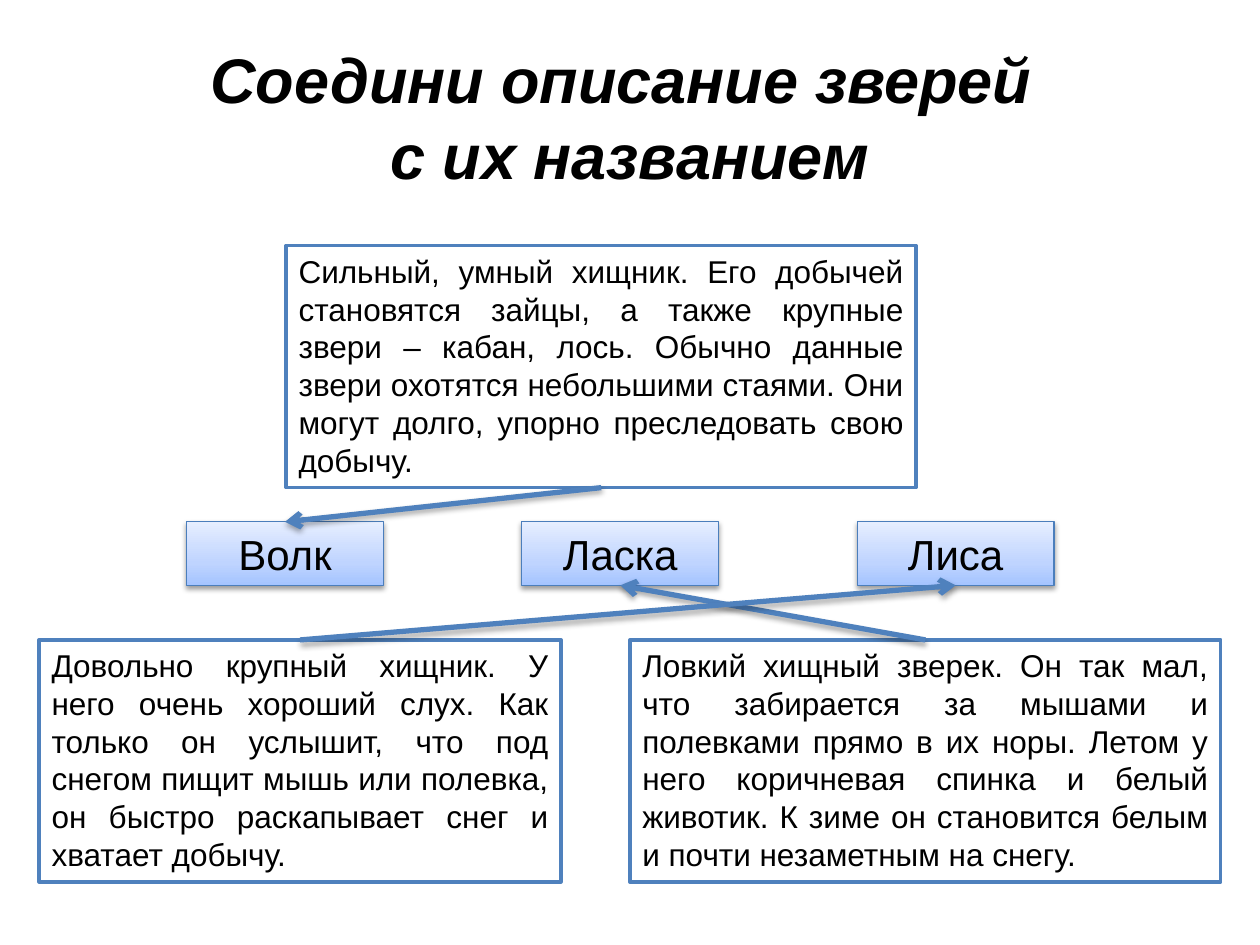
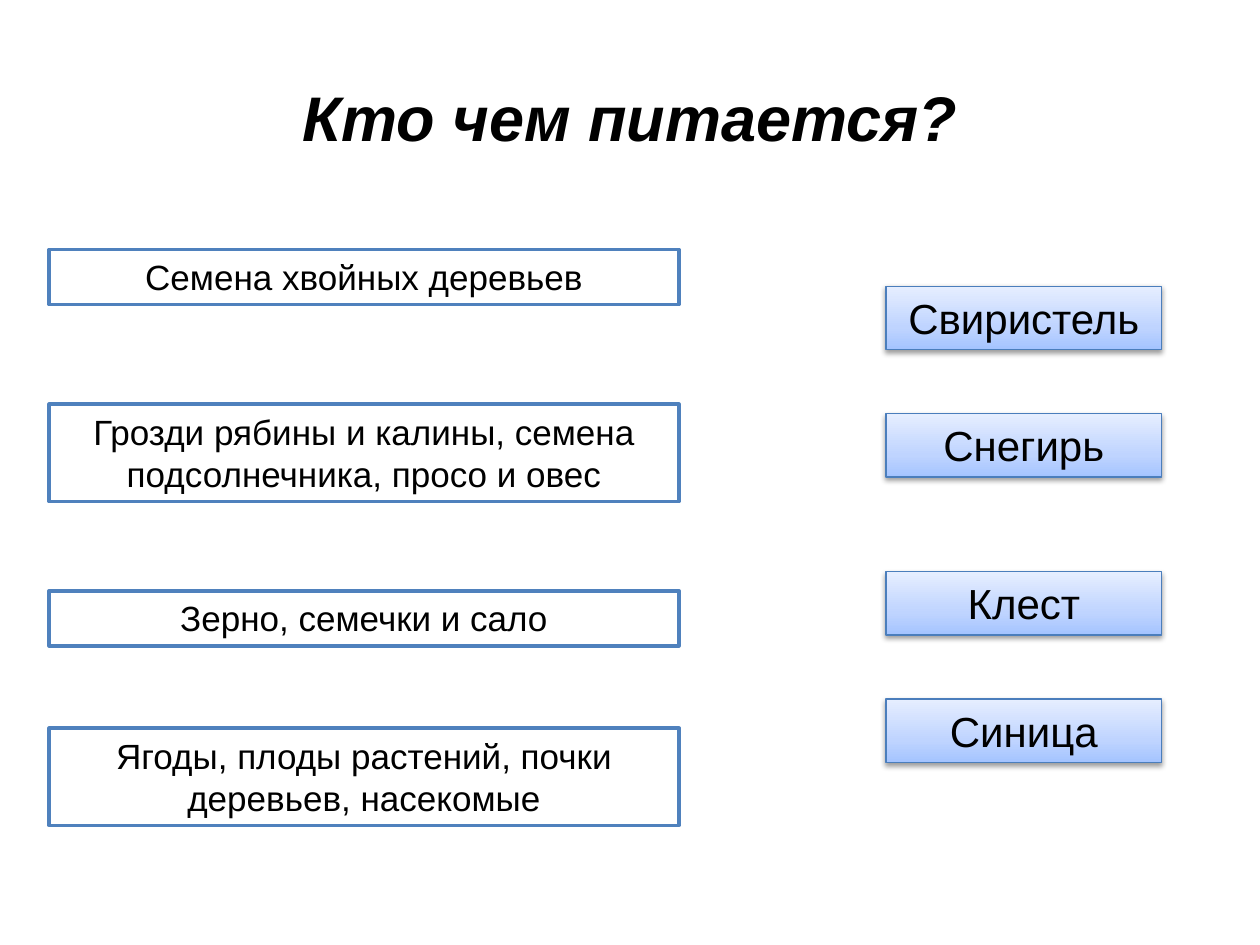
from collections import namedtuple

from lxml.etree import SubElement
from pptx import Presentation
from pptx.dml.color import RGBColor
from pptx.enum.shapes import MSO_CONNECTOR, MSO_SHAPE
from pptx.enum.text import MSO_ANCHOR, MSO_AUTO_SIZE, PP_ALIGN
from pptx.oxml.ns import qn
from pptx.util import Cm, Pt

BLACK = RGBColor(0x00, 0x00, 0x00)
WHITE = RGBColor(0xFF, 0xFF, 0xFF)
BLUE = RGBColor(0x4F, 0x81, 0xBD)
NAME_BORDER = RGBColor(0x4B, 0x7E, 0xBC)
NAME_STOPS = [
    (0, RGBColor(0xA4, 0xC4, 0xFF)),
    (35, RGBColor(0xBF, 0xD4, 0xFF)),
    (100, RGBColor(0xE6, 0xEE, 0xFF)),
]
FONT = "Arial"
TOP, LEFT, BOTTOM, RIGHT = range(4)  # connection sites of a rectangle

Box = namedtuple("Box", "left top width height")  # centimetres
TITLE_BOX = Box(1.27, 0.76, 22.86, 3.18)
BODY_BOX = Box(0.79, 4.95, 23.82, 12.83)
NAME_HEIGHT = 1.28


def write(frame, text, size=18, bold=False, italic=False,
          align=PP_ALIGN.CENTER, anchor=MSO_ANCHOR.TOP):
    """Fill a text frame with one formatted paragraph."""
    frame.word_wrap = True
    frame.vertical_anchor = anchor
    para = frame.paragraphs[0]
    para.text = text
    para.alignment = align
    for span in para.runs:
        font = span.font
        font.name, font.size = FONT, Pt(size)
        font.bold, font.italic = bold, italic
        font.color.rgb = BLACK


def add_color(parent, color, alpha=None):
    element = SubElement(parent, qn("a:srgbClr"), val=str(color))
    if alpha is not None:
        SubElement(element, qn("a:alpha"), val=str(alpha * 1000))


def add_shadow(properties, distance, alpha):
    """Give a shape or connector a soft shadow straight below it."""
    effects = properties.find(qn("a:effectLst"))
    if effects is None:
        effects = SubElement(properties, qn("a:effectLst"))
    shadow = SubElement(effects, qn("a:outerShdw"), blurRad=str(Pt(3.1)),
                        dist=str(Pt(distance)), dir="5400000", rotWithShape="0")
    add_color(shadow, BLACK, alpha)


def add_title(page, text, box=TITLE_BOX):
    title = page.shapes.add_textbox(*map(Cm, box))
    write(title.text_frame, text, size=36, bold=True, italic=True,
          anchor=MSO_ANCHOR.MIDDLE)


def add_rectangle(page, box, text, border, border_width, **text_format):
    shape = page.shapes.add_shape(MSO_SHAPE.RECTANGLE, *map(Cm, box))
    shape.line.color.rgb = border
    shape.line.width = Pt(border_width)
    shape.shadow.inherit = False
    write(shape.text_frame, text, **text_format)
    shape.text_frame.auto_size = MSO_AUTO_SIZE.SHAPE_TO_FIT_TEXT
    return shape


def add_description(page, box, text, **text_format):
    """White card with a blue border."""
    card = add_rectangle(page, box, text, BLUE, 2, **text_format)
    card.fill.solid()
    card.fill.fore_color.rgb = WHITE
    return card


def add_name(page, box, text):
    """Light blue gradient plate with an animal's name."""
    plate = add_rectangle(page, box, text, NAME_BORDER, 0.75, size=24)
    plate.fill.gradient()
    properties = plate.element.spPr
    gradient = properties.find(qn("a:gradFill"))
    for child in list(gradient):
        gradient.remove(child)
    stops = SubElement(gradient, qn("a:gsLst"))
    for position, color in NAME_STOPS:
        add_color(SubElement(stops, qn("a:gs"), pos=str(position * 1000)), color)
    SubElement(gradient, qn("a:lin"), ang="16200000", scaled="0")
    add_shadow(properties, 1.6, 38)
    return plate


def add_arrow(page, start, start_site, end, end_site):
    arrow = page.shapes.add_connector(MSO_CONNECTOR.STRAIGHT, 0, 0, 0, 0)
    arrow.begin_connect(start, start_site)
    arrow.end_connect(end, end_site)
    arrow.line.color.rgb = BLUE
    arrow.line.width = Pt(3)
    SubElement(arrow.line._get_or_add_ln(), qn("a:tailEnd"), type="arrow")
    add_shadow(arrow.element.spPr, 1.8, 35)


def add_matching(page, box):
    """Three descriptions joined by arrows to three animal names."""
    height = 4.88
    lower_top = box.top + box.height - height
    descriptions = [
        (Box(box.left + 4.98, box.top, 12.7, height),
         "Сильный, умный хищник. Его добычей становятся зайцы, а также крупные "
         "звери – кабан, лось. Обычно данные звери охотятся небольшими стаями. "
         "Они могут долго, упорно преследовать свою добычу."),
        (Box(box.left, lower_top, 10.52, height),
         "Довольно крупный хищник. У него очень хороший слух. Как только он "
         "услышит, что под снегом пищит мышь или полевка, он быстро раскапывает "
         "снег и хватает добычу."),
        (Box(box.left + 11.91, lower_top, 11.91, height),
         "Ловкий хищный зверек. Он так мал, что забирается за мышами и полевками "
         "прямо в их норы. Летом у него коричневая спинка и белый животик. К зиме "
         "он становится белым и почти незаметным на снегу."),
    ]
    strong, keen, nimble = [
        add_description(page, place, text, align=PP_ALIGN.JUSTIFY)
        for place, text in descriptions
    ]
    wolf, weasel, fox = [
        add_name(page, Box(box.left + 2.97 + 6.76 * column, box.top + 5.57,
                           3.97, NAME_HEIGHT), name)
        for column, name in enumerate(["Волк", "Ласка", "Лиса"])
    ]
    add_arrow(page, strong, BOTTOM, wolf, TOP)
    add_arrow(page, nimble, TOP, weasel, BOTTOM)
    add_arrow(page, keen, TOP, fox, BOTTOM)


def add_feeding(page, box):
    """Foods on the left, birds on the right."""
    foods = [
        (0.08, 1.11, "Семена хвойных деревьев"),
        (3.2, 1.96, "Грозди рябины и калины, семена подсолнечника, просо и овес"),
        (6.96, 1.11, "Зерно, семечки и сало"),
        (9.73, 1.96, "Ягоды, плоды растений, почки деревьев, насекомые"),
    ]
    for offset, height, food in foods:
        add_description(page, Box(box.left + 0.2, box.top + offset, 12.7, height),
                        food, size=20)
    birds = [(0.82, "Свиристель"), (3.39, "Снегирь"),
             (6.57, "Клест"), (9.14, "Синица")]
    for offset, bird in birds:
        add_name(page, Box(box.left + 17.07, box.top + offset, 5.56, NAME_HEIGHT),
                 bird)


def main():
    deck = Presentation()
    deck.slide_width, deck.slide_height = Cm(25.4), Cm(19.05)
    pages = [
        ("Соедини описание зверей \vс их названием", add_matching),
        ("Кто чем питается?", add_feeding),
    ]
    for title, add_body in pages:
        page = deck.slides.add_slide(deck.slide_layouts[6])
        add_title(page, title)
        add_body(page, BODY_BOX)
    deck.save("out.pptx")


if __name__ == "__main__":
    main()
